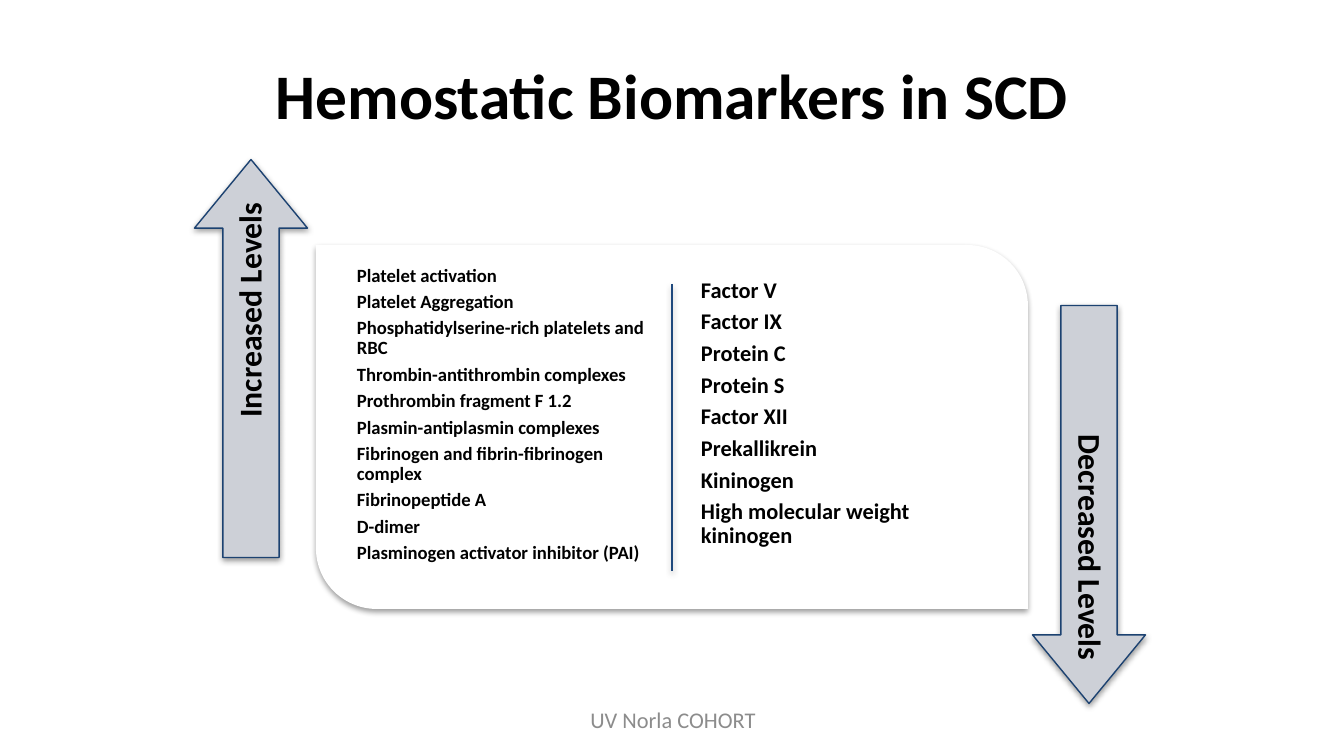
from pptx import Presentation
from pptx.dml.color import RGBColor
from pptx.enum.shapes import MSO_CONNECTOR, MSO_SHAPE
from pptx.enum.text import MSO_ANCHOR as ANCHOR, PP_ALIGN as ALIGN
from pptx.oxml import parse_xml
from pptx.util import Pt

PX = 914400 / 134.4
COLORS = {
    "text": "000000", "footer": "8C8C8C", "panel": "FFFFFF",
    "divider": "1F497D", "arrow": "CDD0D7", "arrow edge": "1C4271",
}
COLORS = {name: RGBColor.from_string(value) for name, value in COLORS.items()}
SHADOW = (
    '<a:effectLst xmlns:a="http://schemas.openxmlformats.org/drawingml/2006/main">'
    '<a:outerShdw blurRad="40000" dist="20000" dir="5400000" rotWithShape="0">'
    '<a:srgbClr val="000000"><a:alpha val="38000"/></a:srgbClr>'
    '</a:outerShdw></a:effectLst>'
)


def px(*lengths):
    return [round(length * PX) for length in lengths]


def add_text(area, lines, size, color="text", bold=True, align=ALIGN.LEFT,
             anchor=ANCHOR.MIDDLE, inset=7, spaced=True):
    box = page.shapes.add_textbox(*px(*area))
    frame = box.text_frame
    frame.word_wrap = True
    frame.vertical_anchor = anchor
    frame.margin_left, frame.margin_top, frame.margin_right, frame.margin_bottom = px(*[inset] * 4)
    for index, line in enumerate(lines):
        para = frame.paragraphs[0] if index == 0 else frame.add_paragraph()
        para.text = line
        para.alignment = align
        if spaced:
            para.line_spacing = 0.9
            para.space_after = Pt(round(size * 0.33, 1))
        para.font.name = "Calibri"
        para.font.size = Pt(size)
        para.font.bold = bold
        para.font.color.rgb = COLORS[color]
    return box


deck = Presentation()
deck.slide_width, deck.slide_height = px(1344, 756)
page = deck.slides.add_slide(deck.slide_layouts[6])

# Title and footer
add_text((67, 31, 1210, 126), ["Hemostatic Biomarkers in SCD"], 34,
         align=ALIGN.CENTER, spaced=False)
add_text((460, 700, 426, 40), ["UV Norla COHORT"], 12, color="footer",
         bold=False, align=ALIGN.CENTER, spaced=False)

# Panel with a divider
panel = page.shapes.add_shape(MSO_SHAPE.ROUND_2_DIAG_RECTANGLE, *px(316, 245, 712, 364))
panel.adjustments[0] = 0
panel.adjustments[1] = 0.167
panel.fill.solid()
panel.fill.fore_color.rgb = COLORS["panel"]
panel.line.fill.background()
panel._element.spPr.append(parse_xml(SHADOW))

divider = page.shapes.add_connector(MSO_CONNECTOR.STRAIGHT, *px(672, 284, 672, 571))
divider.line.color.rgb = COLORS["divider"]
divider.line.width = Pt(0.75)
divider._element.spPr.append(parse_xml(SHADOW))

# Biomarker lists
increased = [
    "Platelet activation",
    "Platelet Aggregation",
    "Phosphatidylserine-rich platelets and RBC",
    "Thrombin-antithrombin complexes",
    "Prothrombin fragment F 1.2",
    "Plasmin-antiplasmin complexes",
    "Fibrinogen and fibrin-fibrinogen complex",
    "Fibrinopeptide A",
    "D-dimer",
    "Plasminogen activator inhibitor (PAI)",
]
decreased = [
    "Factor V", "Factor IX", "Protein C", "Protein S", "Factor XII",
    "Prekallikrein", "Kininogen", "High molecular weight kininogen",
]
add_text((352, 261, 302, 309), increased, 10, anchor=ANCHOR.TOP, inset=5)
add_text((695, 273, 293, 309), decreased, 12, anchor=ANCHOR.TOP, inset=6)

# Turned arrows with their labels
for label, turn, arrow_at, label_at in [
    ("Increased Levels", 270, (52, 302), (70, 347)),
    ("Decreased Levels", 90, (890, 448), (907, 460)),
]:
    arrow = page.shapes.add_shape(MSO_SHAPE.RIGHT_ARROW, *px(*arrow_at, 398, 113))
    arrow.adjustments[0] = 0.498
    arrow.adjustments[1] = 0.607
    arrow.rotation = turn
    arrow.fill.solid()
    arrow.fill.fore_color.rgb = COLORS["arrow"]
    arrow.line.color.rgb = COLORS["arrow edge"]
    arrow.line.width = Pt(0.75)
    arrow._element.spPr.append(parse_xml(SHADOW))
    caption = add_text((*label_at, 363, 56), [label], 17, align=ALIGN.RIGHT, inset=9)
    caption.rotation = turn

deck.save("out.pptx")
